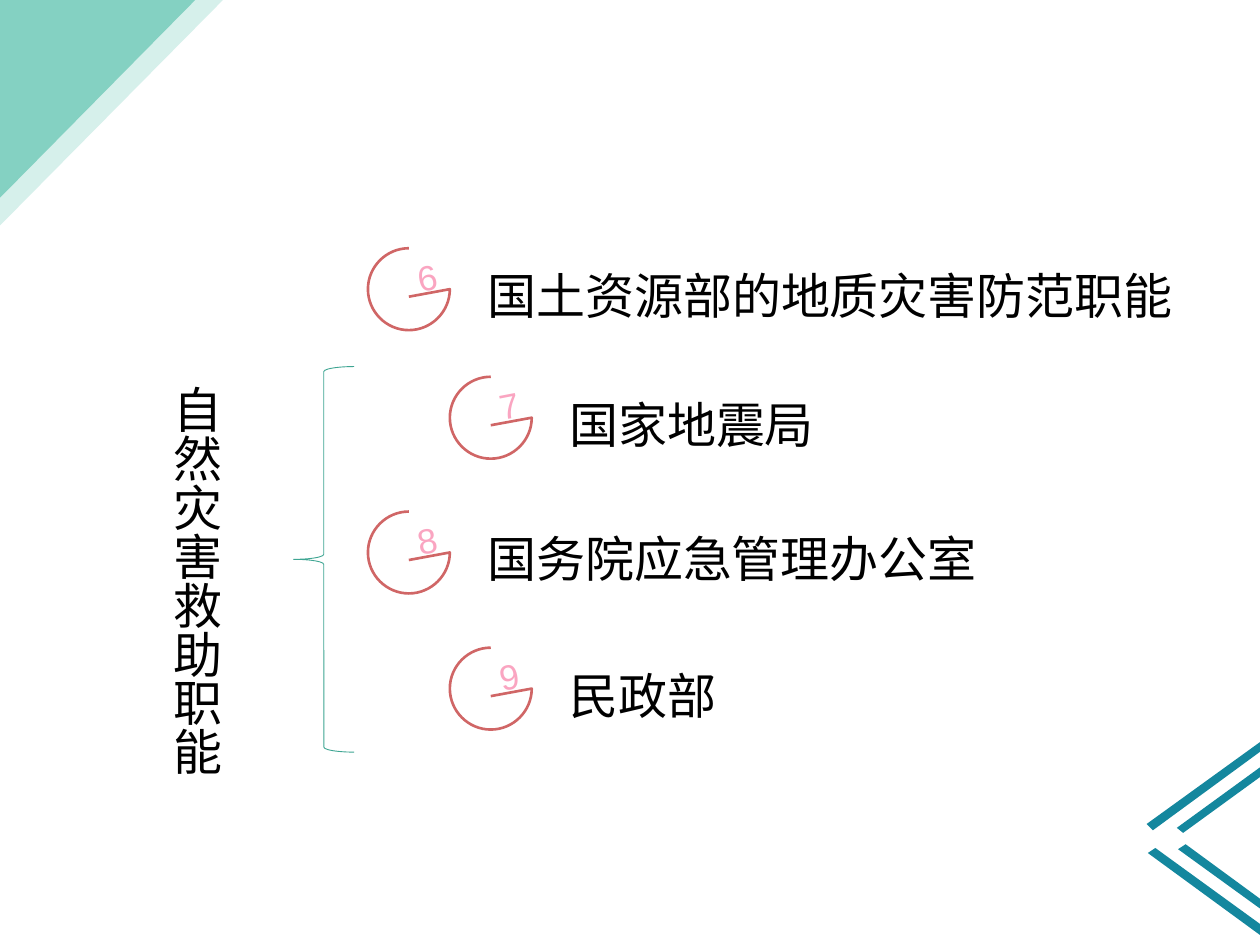
from dataclasses import dataclass

from lxml import etree
from pptx import Presentation
from pptx.dml.color import RGBColor
from pptx.enum.shapes import MSO_SHAPE
from pptx.enum.text import MSO_ANCHOR, MSO_AUTO_SIZE, PP_ALIGN
from pptx.oxml.ns import qn
from pptx.util import Inches, Pt

RIGHT_TRIANGLE, LEFT_BRACE = MSO_SHAPE.RIGHT_TRIANGLE, MSO_SHAPE.LEFT_BRACE
MIDDLE, TOP = MSO_ANCHOR.MIDDLE, MSO_ANCHOR.TOP
CENTER, LEFT = PP_ALIGN.CENTER, PP_ALIGN.LEFT
GROW = MSO_AUTO_SIZE.SHAPE_TO_FIT_TEXT


@dataclass(frozen=True)
class Theme:
    pale_mint: str = "D6F0EB"
    mint: str = "84D1C2"
    teal: str = "14879E"
    brace: str = "3EA592"
    ring: str = "D06666"
    number: str = "FAA5C1"
    text: str = "000000"
    number_font: str = "Arial"
    text_font: str = "Noto Sans CJK SC"
    number_size: int = 20
    text_size: int = 28


THEME = Theme()
RING_SIZE = 0.65
QUARTER_ARC = 0.55  # Bezier handle length, as a share of the radius


def paint(shape, fill=None, line=None, width=0):
    shape.shadow.inherit = False
    if fill:
        shape.fill.solid()
        shape.fill.fore_color.rgb = RGBColor.from_string(fill)
    else:
        shape.fill.background()
    if line:
        shape.line.color.rgb = RGBColor.from_string(line)
        shape.line.width = Pt(width)
    else:
        shape.line.fill.background()


def add_outline(slide, points, closed):
    corners = [(Inches(x), Inches(y)) for x, y in points]
    builder = slide.shapes.build_freeform(*corners[0])
    builder.add_line_segments(corners[1:], close=closed)
    return builder.convert_to_shape()


def add_ring(slide, left, top):
    """A hand from near the centre, then three quarter arcs clockwise."""
    radius = RING_SIZE / 2
    x, y = left + radius, top + radius
    ring = add_outline(slide, [(x, y + 0.06), (x + radius, y), (x, y + radius),
                               (x - radius, y), (x, y - radius)], closed=False)
    # Bend every segment after the hand into a quarter circle
    directions = [(1, 0), (0, 1), (-1, 0), (0, -1)]
    segments = list(ring._element.iter(qn("a:lnTo")))[1:]
    for segment, start, end in zip(segments, directions, directions[1:]):
        segment.tag = qn("a:cubicBezTo")
        handles = [[a + QUARTER_ARC * b for a, b in zip(near, far)]
                   for near, far in ((start, end), (end, start))]
        for index, (dx, dy) in enumerate(handles):
            handle = etree.Element(qn("a:pt"))
            handle.set("x", str(Inches(radius + radius * dx)))
            handle.set("y", str(Inches(radius + radius * dy)))
            segment.insert(index, handle)
    paint(ring, line=THEME.ring, width=1.5)


def add_text(slide, box, words, font, size, color, align=LEFT, anchor=MIDDLE,
             spacing=1.0, wrap=True):
    textbox = slide.shapes.add_textbox(*map(Inches, box))
    frame = textbox.text_frame
    frame.word_wrap, frame.vertical_anchor = wrap, anchor
    paragraph = frame.paragraphs[0]
    paragraph.alignment, paragraph.line_spacing = align, spacing
    run = paragraph.add_run()
    run.text = words
    for name, value in {"name": font, "size": Pt(size)}.items():
        setattr(run.font, name, value)
    run.font.color.rgb = RGBColor.from_string(color)
    east_asian = etree.SubElement(run.font._element, qn("a:ea"))
    east_asian.set("typeface", font)
    return textbox


def add_corner(slide, left, top):
    """Two stacked triangles in the upper left."""
    for width, height, color in ((1.77, 1.79, THEME.pale_mint),
                                 (1.55, 1.57, THEME.mint)):
        triangle = slide.shapes.add_shape(
            RIGHT_TRIANGLE, *map(Inches, (left, top, width, height)))
        triangle._element.spPr.find(qn("a:xfrm")).set("flipV", "1")
        paint(triangle, fill=color)


def add_chevrons(slide, left, top):
    """Four slanted bars at the lower right; points relative to the corner."""
    bars = (
        ((0, 0.65), (0.05, 0.7), (0.91, 0.07), (0.9, 0)),
        ((0.01, 0.88), (0.9, 1.53), (0.91, 1.45), (0.07, 0.84)),
        ((0.9, 0.2), (0.24, 0.68), (0.29, 0.72), (0.91, 0.27)),
        ((0.31, 0.81), (0.25, 0.85), (0.9, 1.32), (0.91, 1.25)),
    )
    for bar in bars:
        points = [(left + x, top + y) for x, y in bar]
        paint(add_outline(slide, points, closed=True), fill=THEME.teal)


def add_item(slide, left, top, label_width, label_height, number, label):
    """A numbered open ring with its label to the right."""
    add_ring(slide, left, top)
    digit = add_text(slide, (left + 0.31, top + 0.1, 0.32, 0.25), number,
                     THEME.number_font, THEME.number_size, THEME.number,
                     align=CENTER)
    digit.rotation = 349
    for side in ("left", "top", "right", "bottom"):
        setattr(digit.text_frame, f"margin_{side}", 0)

    label_top = top + (RING_SIZE - label_height) / 2
    add_text(slide, (left + 0.85, label_top, label_width, label_height),
             label, THEME.text_font, THEME.text_size, THEME.text, spacing=1.2)


def add_group_title(slide, left, top, width, height):
    """Vertical heading and the brace that opens toward the items."""
    brace = slide.shapes.add_shape(
        LEFT_BRACE, *map(Inches, (left + 1.17, top - 0.05, 0.48, 3.06)))
    paint(brace, line=THEME.brace, width=0.5)
    heading = add_text(slide, (left, top, width, height), "自然灾害救助职能",
                       THEME.text_font, THEME.text_size, THEME.text,
                       anchor=TOP, spacing=1.2, wrap=False)
    heading.text_frame.auto_size = GROW
    heading.text_frame._txBody.bodyPr.set("vert", "eaVert")


def main():
    deck = Presentation()
    deck.slide_width, deck.slide_height = Inches(10), Inches(7.5)
    slide = deck.slides.add_slide(deck.slide_layouts[6])

    add_corner(slide, 0, 0)
    add_chevrons(slide, 9.1, 5.89)

    # Items alternate between two indents
    items = (
        (1.97, 5.81, 0.81, "国土资源部的地质灾害防范职能"),
        (2.99, 4.14, 0.81, "国家地震局"),
        (4.06, 4.14, 0.81, "国务院应急管理办公室"),
        (5.14, 5.45, 1.03, "民政部"),
    )
    for index, (top, width, height, label) in enumerate(items):
        left = 2.92 + RING_SIZE * (index % 2)
        add_item(slide, left, top, width, height, str(index + 6), label)

    add_group_title(slide, 1.16, 2.96, 0.77, 3.24)
    deck.save("out.pptx")


if __name__ == "__main__":
    main()
